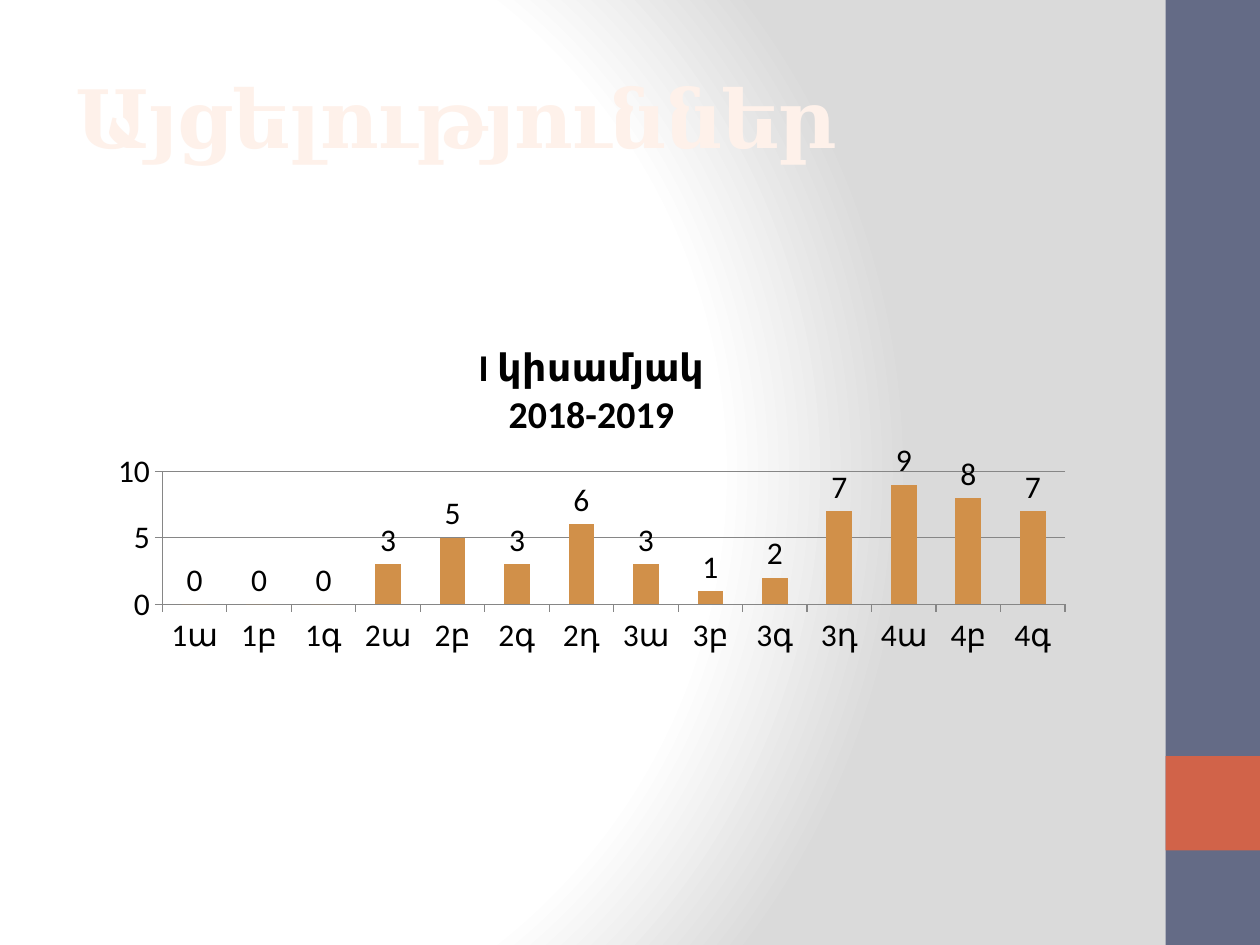
"""Build the class visits slide with its half-year column chart."""
from dataclasses import dataclass

from lxml.etree import SubElement
from pptx import Presentation
from pptx.chart.data import CategoryChartData
from pptx.dml.color import RGBColor
from pptx.enum.chart import XL_CHART_TYPE, XL_LABEL_POSITION, XL_TICK_MARK
from pptx.enum.shapes import MSO_SHAPE
from pptx.enum.text import MSO_ANCHOR, MSO_AUTO_SIZE, PP_ALIGN
from pptx.oxml import parse_xml
from pptx.oxml.ns import nsdecls, qn
from pptx.util import Inches, Pt

COLORS = {
    "white": "FFFFFF", "gray": "DADADA", "slate": "646B86", "red": "D16349",
    "cream": "FEF1EA", "outline": "C86D09", "column": "D19049",
    "text": "000000", "axis": "868686",
}
VISITS = {
    "1ա": 0, "1բ": 0, "1գ": 0, "2ա": 3, "2բ": 5, "2գ": 3, "2դ": 6,
    "3ա": 3, "3բ": 1, "3գ": 2, "3դ": 7, "4ա": 9, "4բ": 8, "4գ": 7,
}


@dataclass
class Band:
    top: float
    height: float
    color: str


BANDS = [Band(0, 7.5, "slate"), Band(6, 0.75, "red")]


def rgb(name: str) -> RGBColor:
    return RGBColor.from_string(COLORS[name])


def format_font(font, color: str, **values) -> None:
    for name, value in values.items():
        setattr(font, name, value)
    font.color.rgb = rgb(color)


def set_background(s) -> None:
    s.background.fill.solid()
    bg_pr = s.background._cSld.bg.bgPr
    stops = "".join(
        f'<a:gs pos="{pos * 1000}"><a:srgbClr val="{COLORS[name]}"/></a:gs>'
        for pos, name in [(0, "white"), (75, "white"), (100, "gray")])
    grad = parse_xml(
        f'<a:gradFill {nsdecls("a")} rotWithShape="1"><a:gsLst>{stops}</a:gsLst>'
        '<a:path path="circle"><a:fillToRect l="20000" t="50000" '
        'r="100000" b="50000"/></a:path></a:gradFill>')
    bg_pr.replace(bg_pr.find(qn("a:solidFill")), grad)


def add_band(s, band: Band) -> None:
    sp = s.shapes.add_shape(MSO_SHAPE.RECTANGLE, Inches(9.25), Inches(band.top),
                            Inches(0.75), Inches(band.height))
    sp.shadow.inherit = False
    sp.fill.solid()
    sp.fill.fore_color.rgb = rgb(band.color)
    sp.line.fill.background()


def set_title(s, text: str) -> None:
    sp = s.shapes.title
    box = {"left": 0.5, "top": 0.3, "width": 8.33, "height": 1.25}
    for name, value in box.items():
        setattr(sp, name, Inches(value))
    tf = sp.text_frame
    tf.auto_size = MSO_AUTO_SIZE.NONE
    tf.vertical_anchor = MSO_ANCHOR.MIDDLE
    p = tf.paragraphs[0]
    p.alignment = PP_ALIGN.LEFT
    r = p.add_run()
    r.text = text
    format_font(r.font, "cream", name="Cambria", size=Pt(46), bold=True)
    r_pr = r._r.get_or_add_rPr()
    r_pr.set("spc", "-100")
    ln = parse_xml(f'<a:ln {nsdecls("a")} w="{Pt(2.48)}"/>')
    SubElement(SubElement(ln, qn("a:solidFill")), qn("a:srgbClr"),
               val=COLORS["outline"])
    r_pr.insert(0, ln)


def format_axis(axis) -> None:
    axis.major_tick_mark = XL_TICK_MARK.OUTSIDE
    axis.minor_tick_mark = XL_TICK_MARK.NONE
    axis.format.line.color.rgb = rgb("axis")


def add_visits_chart(s, title_lines: list[str]) -> None:
    data = CategoryChartData()
    data.categories = list(VISITS)
    data.add_series("Series 1", list(VISITS.values()))
    chart = s.shapes.add_chart(
        XL_CHART_TYPE.COLUMN_CLUSTERED, Inches(0.78), Inches(2.58),
        Inches(7.83), Inches(2.67), data).chart
    format_font(chart.font, "text", name="Calibri", size=Pt(18))
    chart.has_legend = False

    chart.has_title = True
    chart.chart_title.include_in_layout = False
    tf = chart.chart_title.text_frame
    for i, line in enumerate(title_lines):
        p = tf.add_paragraph() if i else tf.paragraphs[0]
        r = p.add_run()
        r.text = line
        format_font(r.font, "text", name="Calibri", size=Pt(21.6), bold=True)

    format_axis(chart.category_axis)
    axis = chart.value_axis
    format_axis(axis)
    axis.minimum_scale, axis.maximum_scale, axis.major_unit = 0, 10, 5
    axis.has_major_gridlines = True
    axis.major_gridlines.format.line.color.rgb = rgb("axis")

    plot = chart.plots[0]
    plot.gap_width = 150
    plot.vary_by_categories = False
    fill = plot.series[0].format.fill
    fill.solid()
    fill.fore_color.rgb = rgb("column")
    plot.has_data_labels = True
    labels = plot.data_labels
    labels.show_value = True
    labels.position = XL_LABEL_POSITION.OUTSIDE_END
    format_font(labels.font, "text", name="Calibri", size=Pt(18))


def main() -> None:
    prs = Presentation()
    prs.slide_width, prs.slide_height = Inches(10), Inches(7.5)
    s = prs.slides.add_slide(prs.slide_layouts[5])
    set_background(s)
    for band in BANDS:
        add_band(s, band)
    set_title(s, "Այցելություններ")
    add_visits_chart(s, ["I կիսամյակ", "2018-2019"])
    prs.save("out.pptx")


if __name__ == "__main__":
    main()
